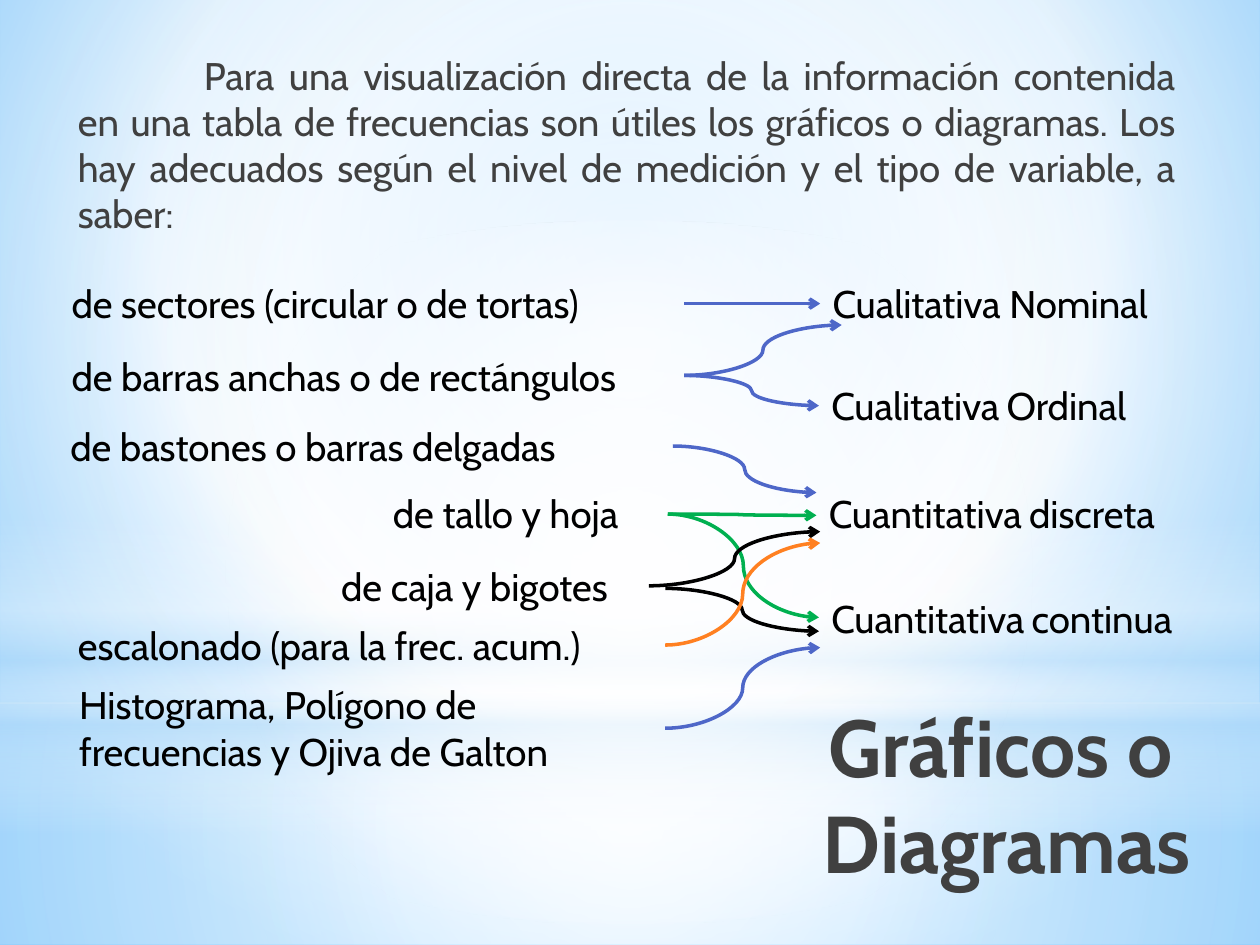
"""Builds the slide that links chart types to kinds of variable."""
import pptx
import pptx.util
import pptx.oxml
import pptx.oxml.ns
import pptx.dml.color
import pptx.enum.text
import pptx.enum.shapes

HUES = {"ink": "000000", "gray": "404040", "blue": "4E67C8", "green": "00B050",
        "orange": "FF8021", "white": "FFFFFF", "pale": "B4DCFA",
        "sky": "9ED5FF", "deep": "5BB9FF"}
ALIGN = pptx.enum.text.PP_ALIGN
FIT = pptx.enum.text.MSO_AUTO_SIZE
KIND = pptx.enum.shapes.MSO_SHAPE
NS = pptx.oxml.ns.nsdecls("a")
GRAD = pptx.oxml.ns.qn("a:gradFill")
CELL = pptx.util.Inches(0.1)
COLS, ROWS = 100, 75
MID = (50, 50, 50, 50)


def paint(fill, root, stops, rect):
    fill.gradient()
    marks = "".join(
        f'<a:gs pos="{pos * 1000}"><a:srgbClr val="{HUES[hue]}">'
        f'<a:alpha val="{alpha * 1000}"/></a:srgbClr></a:gs>'
        for pos, hue, alpha in stops)
    if rect:
        sides = " ".join(f'{k}="{v * 1000}"' for k, v in zip("ltrb", rect))
        way = f'<a:path path="circle"><a:fillToRect {sides}/></a:path>'
    else:
        way = '<a:lin ang="5400000" scaled="0"/>'
    old = next(root.iter(GRAD))
    old.getparent().replace(old, pptx.oxml.parse_xml(
        f'<a:gradFill {NS} rotWithShape="1"><a:gsLst>{marks}</a:gsLst>{way}</a:gradFill>'))


def write(box, text, size=22, hue="ink", bold=False, align=ALIGN.LEFT,
          wrap=True, fit=FIT.SHAPE_TO_FIT_TEXT):
    frame = box.text_frame
    for key, val in {"word_wrap": wrap, "auto_size": fit,
                     "vertical_anchor": pptx.enum.text.MSO_ANCHOR.TOP}.items():
        setattr(frame, key, val)
    para = frame.paragraphs[0]
    para.alignment = align
    for row, line in enumerate(text.split("\n")):
        if row:
            para.add_line_break()
        for i, part in enumerate(line.split("|")):
            run = para.add_run()
            run.text = part
            look = {"name": "Cabin", "bold": bold,
                    "size": pptx.util.Pt(18 if i % 2 else size)}
            for key, val in look.items():
                setattr(run.font, key, val)
            run.font.color.rgb = pptx.dml.color.RGBColor.from_string(HUES[hue])
    return para


deck = pptx.Presentation()
deck.slide_width, deck.slide_height = COLS * CELL, ROWS * CELL
slide = deck.slides.add_slide(deck.slide_layouts[5])
shapes = slide.shapes
paint(slide.background.fill, slide.element,
      [(0, "sky", 100), (60, "white", 100), (100, "deep", 100)], (20, 10, 20, 60))

glows = [
    (KIND.RECTANGLE, 55.8, 19.2, MID,
     [(0, "white", 91), (37, "white", 76), (100, "pale", 79)]),
    (KIND.RECTANGLE, 0, 55.8, MID,
     [(0, "white", 89), (48, "white", 62), (100, "pale", 79)]),
    (KIND.RECTANGLE, 41.2, 25, None,
     [(0, "white", 0), (29, "white", 30), (45, "pale", 40),
      (55, "white", 26), (65, "pale", 60), (100, "white", 0)]),
    (KIND.OVAL, 17.5, 55.8, MID, [(0, "white", 100), (56, "white", 0)]),
]
for kind, top, high, rect, stops in glows:
    glow = shapes.add_shape(kind, 0, int(top * CELL), COLS * CELL, int(high * CELL))
    glow.shadow.inherit = False
    glow.line.fill.background()
    paint(glow.fill, glow.element, stops, rect)

title = shapes.title
title.element.getparent().append(title.element)
for key, val in {"left": 61.8, "top": 54.8, "width": 33.7, "height": 16.5}.items():
    setattr(title, key, int(val * CELL))
write(title, "Gráficos o \nDiagramas", 46, "gray", True, ALIGN.RIGHT, fit=FIT.NONE)

intro = shapes.add_textbox(*(int(v * CELL) for v in (4.7, 3.6, 89.6, 16.5)))
para = write(intro, "Para una visualización directa de la información contenida en una "
             "tabla de frecuencias son útiles los gráficos o diagramas. Los hay adecuados "
             "según el nivel de medición y el tipo de variable, a saber:",
             hue="gray", align=ALIGN.JUSTIFY, fit=FIT.NONE)
para.space_after = pptx.util.Pt(3)
for key, val in {"marL": 0.5, "indent": 10}.items():
    para._p.get_or_add_pPr().set(key, str(int(val * CELL)))

labels = [
    (65.1, 21.7, 29.2, "Cualitativa Nominal", False),
    (65, 29.8, 27.8, "Cualitativa| |Ordinal", False),
    (64.8, 38.4, 30.8, "Cuantitativa| |discreta", False),
    (65, 46.7, 31.7, "Cuantitativa| |continua", False),
    (4.7, 21.7, 49.6, "de sectores (circular o de tortas)", True),
    (4.7, 27.5, 49.6, "de barras anchas o de rectángulos", True),
    (4.6, 33.1, 48.8, "de bastones o barras delgadas", True),
    (5.2, 48.9, 47.6, "escalonado (para la frec. acum.)", True),
    (30.2, 38.4, 22.8, "de tallo y hoja", True),
    (26.1, 44.2, 25.4, "de caja y bigotes", True),
    (5.3, 53.6, 47.5, "Histograma, Polígono de frecuencias y Ojiva de Galton", True),
]
for left, top, wide, text, wrap in labels:
    high = 8.4 if text.startswith("Histo") else 4.7
    box = shapes.add_textbox(*(int(v * CELL) for v in (left, top, wide, high)))
    write(box, text, wrap=wrap)

links = [
    ("blue", 54.3, 24.1, 65.1, 24.1), ("blue", 54.3, 29.8, 65, 32.2),
    ("blue", 54.3, 29.8, 66.8, 25.8), ("blue", 53.4, 35.4, 64.8, 39.1),
    ("green", 53, 40.8, 64.8, 40.9), ("green", 53, 40.8, 65, 49),
    ("ink", 51.5, 46.5, 65.1, 42.2), ("ink", 52.8, 46.7, 65, 50.1),
    ("orange", 52.8, 51.2, 65.1, 43.1), ("blue", 52.8, 57.8, 65.1, 51.4),
]
for hue, *ends in links:
    link = shapes.add_connector(pptx.enum.shapes.MSO_CONNECTOR.CURVE,
                                *(int(v * CELL) for v in ends))
    link.line.width = pptx.util.Pt(2)
    link.line.color.rgb = pptx.dml.color.RGBColor.from_string(HUES[hue])
    link.line._get_or_add_ln().append(pptx.oxml.parse_xml(f'<a:tailEnd {NS} type="arrow"/>'))
    link.element.spPr.append(pptx.oxml.parse_xml(f"<a:effectLst {NS}/>"))

deck.save("out.pptx")
